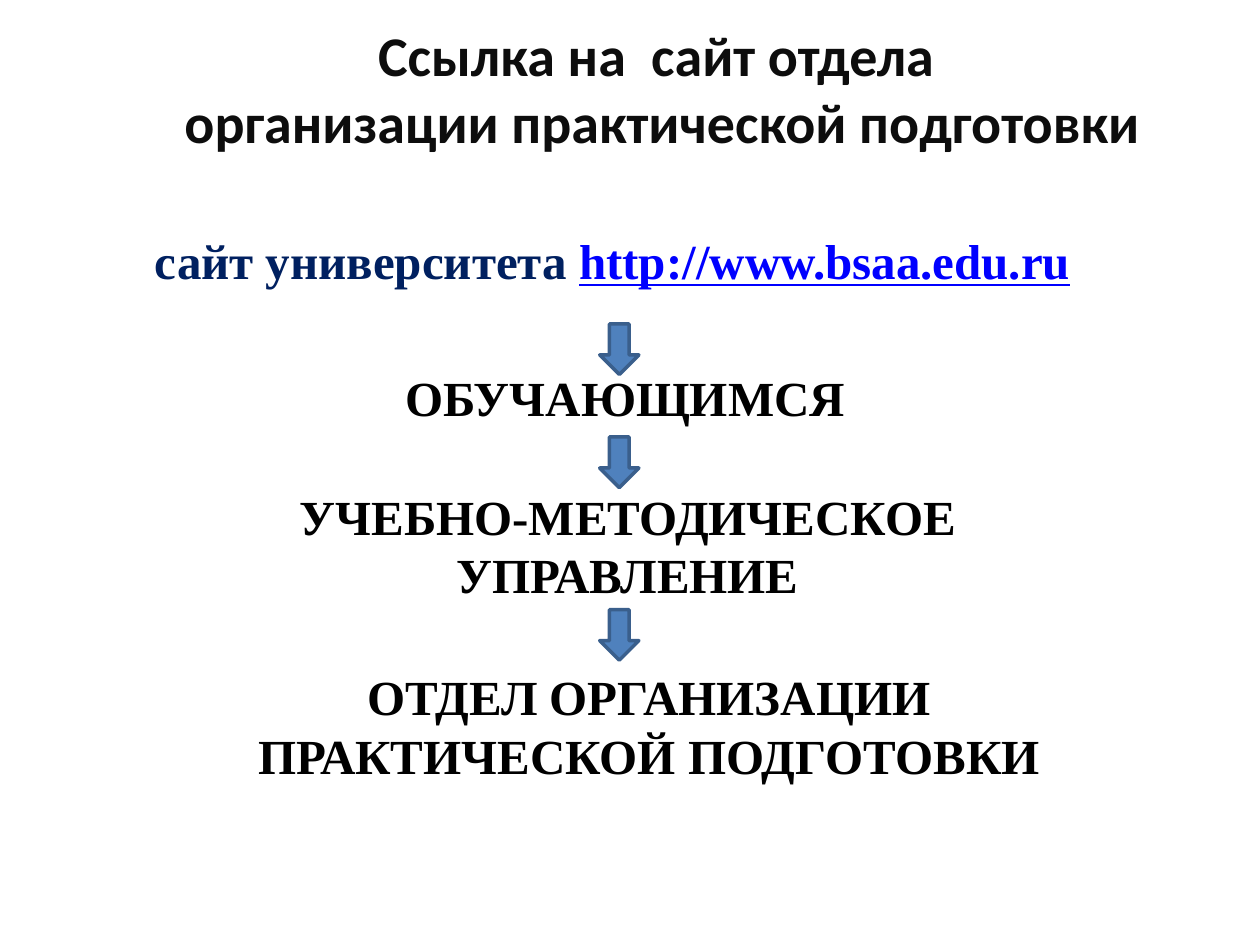
from pptx import Presentation
from pptx.dml.color import RGBColor
from pptx.enum.shapes import MSO_SHAPE
from pptx.enum.text import MSO_ANCHOR, PP_ALIGN
from pptx.util import Cm, Pt

DOWN = MSO_SHAPE.DOWN_ARROW
MIDDLE = MSO_ANCHOR.MIDDLE
CENTER = PP_ALIGN.CENTER

HUES = {
    "title": "0D0D0D",
    "site": "002060",
    "url": "0000FF",
    "step": "000000",
    "arrow": "4F81BD",
    "edge": "3A5F8C",
}
STEP_W, STEP_H = 19.41, 2.57
ARROW_W, ARROW_H = 0.79, 1.02


def color(name):
    return RGBColor.from_string(HUES[name])


def add_text(slide, box, parts, font="Times New Roman", size=28):
    """Place one centred bold paragraph; parts are (text, hue, underline)."""
    frame = slide.shapes.add_textbox(*map(Cm, box)).text_frame
    frame.word_wrap = True
    frame.vertical_anchor = MIDDLE
    para = frame.paragraphs[0]
    para.alignment = CENTER
    for text, hue, under in parts:
        for i, line in enumerate(text.split("\n")):
            if i:
                para.add_line_break()
            run = para.add_run()
            run.text = line
            run.font.name = font
            run.font.size = Pt(size)
            run.font.bold = True
            run.font.underline = under
            run.font.color.rgb = color(hue)


def add_arrow(slide, box):
    arrow = slide.shapes.add_shape(DOWN, *map(Cm, box))
    arrow.shadow.inherit = False
    arrow.fill.solid()
    arrow.fill.fore_color.rgb = color("arrow")
    arrow.line.color.rgb = color("edge")
    arrow.line.width = Pt(2)


def add_title(slide, box):
    text = "Ссылка на  сайт отдела \nорганизации практической подготовки"
    add_text(slide, box, [(text, "title", False)], font="Calibri", size=32)


def add_route(slide, left, top):
    """Draw the steps to the department page, joined by down arrows."""
    steps = [
        (0, 0, [("сайт университета ", "site", False),
                ("http://www.bsaa.edu.ru", "url", True)]),
        (0.38, 2.75, [("ОБУЧАЮЩИМСЯ ", "step", False)]),
        (0.31, 5.74, [("УЧЕБНО-МЕТОДИЧЕСКОЕ УПРАВЛЕНИЕ", "step", False)]),
        (0.74, 9.38, [("ОТДЕЛ ОРГАНИЗАЦИИ ПРАКТИЧЕСКОЙ ПОДГОТОВКИ",
                       "step", False)]),
    ]
    for dx, dy, parts in steps:
        add_text(slide, (left + dx, top + dy, STEP_W, STEP_H), parts)
    for dy in (2.57, 4.85, 8.33):
        add_arrow(slide, (left + 9.45, top + dy, ARROW_W, ARROW_H))


def main():
    deck = Presentation()
    deck.slide_width, deck.slide_height = Cm(25.4), Cm(19.05)
    slide = deck.slides.add_slide(deck.slide_layouts[6])
    add_title(slide, (2.92, 0.28, 20.88, 2.97))
    add_route(slide, 2.64, 3.96)
    deck.save("out.pptx")


if __name__ == "__main__":
    main()
